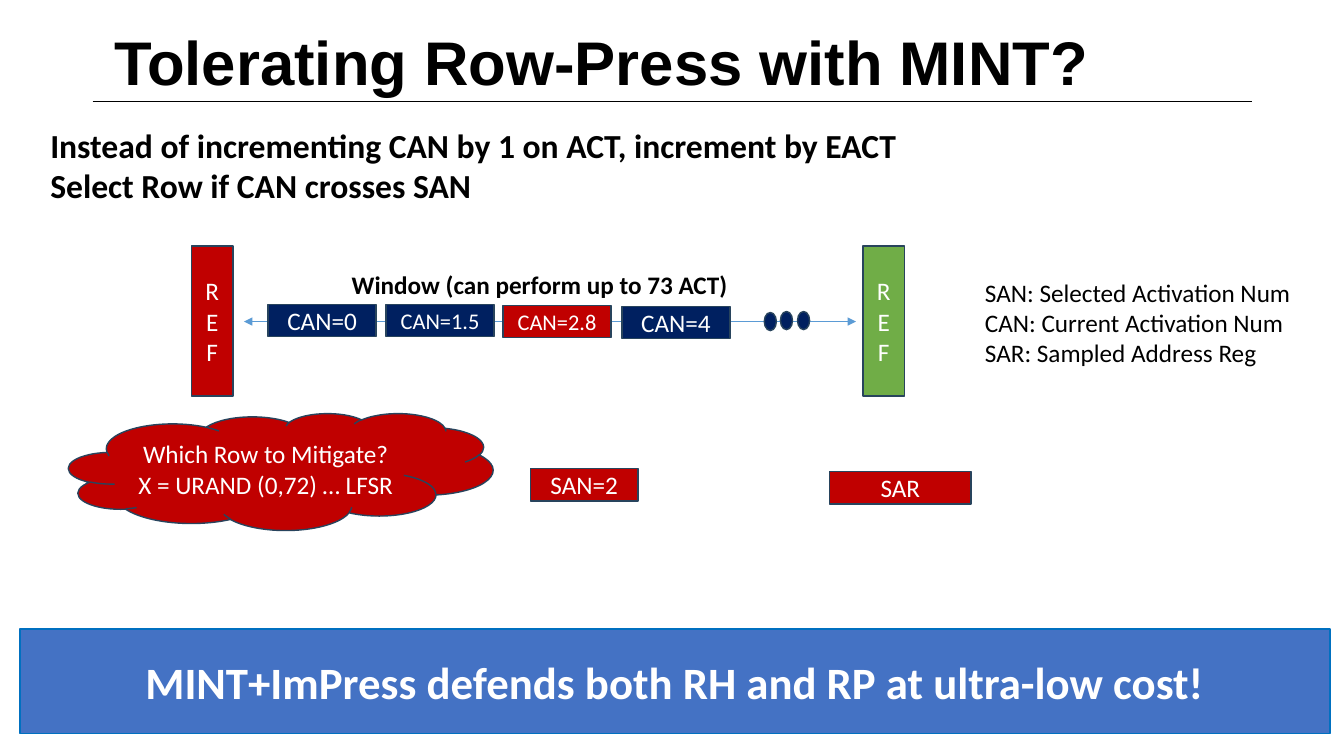
from lxml import etree
from pptx import Presentation
from pptx.dml.color import RGBColor
from pptx.enum.shapes import MSO_CONNECTOR, MSO_SHAPE
from pptx.enum.text import MSO_ANCHOR, PP_ALIGN
from pptx.oxml.ns import qn
from pptx.util import Emu, Pt

RECTANGLE = MSO_SHAPE.RECTANGLE
OVAL = MSO_SHAPE.OVAL
CLOUD = MSO_SHAPE.CLOUD
STRAIGHT = MSO_CONNECTOR.STRAIGHT
MIDDLE = MSO_ANCHOR.MIDDLE
TOP = MSO_ANCHOR.TOP
CENTER = PP_ALIGN.CENTER
LEFT = PP_ALIGN.LEFT

BLACK = RGBColor(0x00, 0x00, 0x00)
WHITE = RGBColor(0xFF, 0xFF, 0xFF)
RED = RGBColor(0xC0, 0x00, 0x00)
NAVY = RGBColor(0x00, 0x20, 0x60)
GREEN = RGBColor(0x70, 0xAD, 0x47)
BANNER_BLUE = RGBColor(0x44, 0x72, 0xC4)
BANNER_EDGE = RGBColor(0x00, 0x70, 0xC0)
EDGE = RGBColor(0x28, 0x44, 0x5D)
ARROW_BLUE = RGBColor(0x5B, 0x9B, 0xD5)

EMU_PER_PX = 9144


def px(*lengths):
    return [Emu(length * EMU_PER_PX) for length in lengths]


def write(frame, lines, size, color, bold, align, font="Calibri"):
    frame.text = "\n".join(lines)
    for paragraph in frame.paragraphs:
        paragraph.alignment = align
        paragraph.font.name = font
        paragraph.font.size = Pt(size)
        paragraph.font.bold = bold
        paragraph.font.color.rgb = color


def add_label(slide, box, lines, size, bold=False, align=LEFT, anchor=TOP,
              wrap=True, font="Calibri"):
    frame = slide.shapes.add_textbox(*px(*box)).text_frame
    frame.word_wrap = wrap
    frame.vertical_anchor = anchor
    write(frame, lines, size, BLACK, bold, align, font)
    return frame


def add_block(slide, kind, box, fill, lines=(), size=18, bold=False, edge=EDGE):
    block = slide.shapes.add_shape(kind, *px(*box))
    block.shadow.inherit = False
    block.fill.solid()
    block.fill.fore_color.rgb = fill
    block.line.color.rgb = edge
    block.line.width = Pt(1)
    if lines:
        block.text_frame.vertical_anchor = MIDDLE
        write(block.text_frame, lines, size, WHITE, bold, CENTER)


def add_line(slide, ends, color, arrows=False):
    line = slide.shapes.add_connector(STRAIGHT, *px(*ends))
    line.line.color.rgb = color
    line.line.width = Pt(0.5)
    if arrows:
        outline = line.line._get_or_add_ln()
        for end in ("a:headEnd", "a:tailEnd"):
            etree.SubElement(outline, qn(end), type="triangle")
    etree.SubElement(line._element.spPr, qn("a:effectLst"))


def add_heading(slide):
    add_line(slide, (92, 101, 1242, 101), BLACK)
    title = add_label(slide, (0, 26, 1194, 78), ["Tolerating Row-Press with MINT?"],
                      44, True, CENTER, MIDDLE, font="Arial")
    title.paragraphs[0].line_spacing = 0.9
    add_label(slide, (40, 119, 1278, 91), [
        "Instead of incrementing CAN by 1 on ACT, increment by EACT",
        "Select Row if CAN crosses SAN",
    ], 24, True)


def add_window(slide):
    for left, fill in ((190, RED), (856, GREEN)):
        add_block(slide, RECTANGLE, (left, 244, 41, 149), fill, ["REF"])
    add_line(slide, (242, 319, 849, 319), ARROW_BLUE, arrows=True)
    add_label(slide, (339, 262, 396, 40), ["Window (can perform up to 73 ACT)"],
              18, True, wrap=False)
    counters = (
        (266, 302, "CAN=0", 18, NAVY),
        (383, 302, "CAN=1.5", 16, NAVY),
        (499, 303, "CAN=2.8", 16, RED),
        (617, 304, "CAN=4", 18, NAVY),
    )
    for left, top, value, size, fill in counters:
        add_block(slide, RECTANGLE, (left, top, 107, 32), fill, [value], size)
    for left, top in ((758, 310), (774, 309), (791, 309)):
        add_block(slide, OVAL, (left, top, 12, 18), NAVY)


def add_selection(slide):
    add_block(slide, CLOUD, (68, 410, 421, 116), RED,
              ["Which Row to Mitigate?", "X = URAND (0,72) … LFSR"])
    add_block(slide, RECTANGLE, (526, 465, 107, 32), RED, ["SAN=2"])
    add_block(slide, RECTANGLE, (823, 468, 140, 32), RED, ["SAR"])
    add_label(slide, (967, 270, 327, 101), [
        "SAN: Selected Activation Num",
        "CAN: Current Activation Num",
        "SAR: Sampled Address Reg",
    ], 18, wrap=False)


def main():
    deck = Presentation()
    deck.slide_width, deck.slide_height = px(1333, 750)
    slide = deck.slides.add_slide(deck.slide_layouts[6])
    add_heading(slide)
    add_block(slide, RECTANGLE, (20, 624, 1299, 104), BANNER_BLUE,
              ["MINT+ImPress defends both RH and RP at ultra-low cost!"],
              32, True, BANNER_EDGE)
    add_window(slide)
    add_selection(slide)
    deck.save("out.pptx")


if __name__ == "__main__":
    main()
